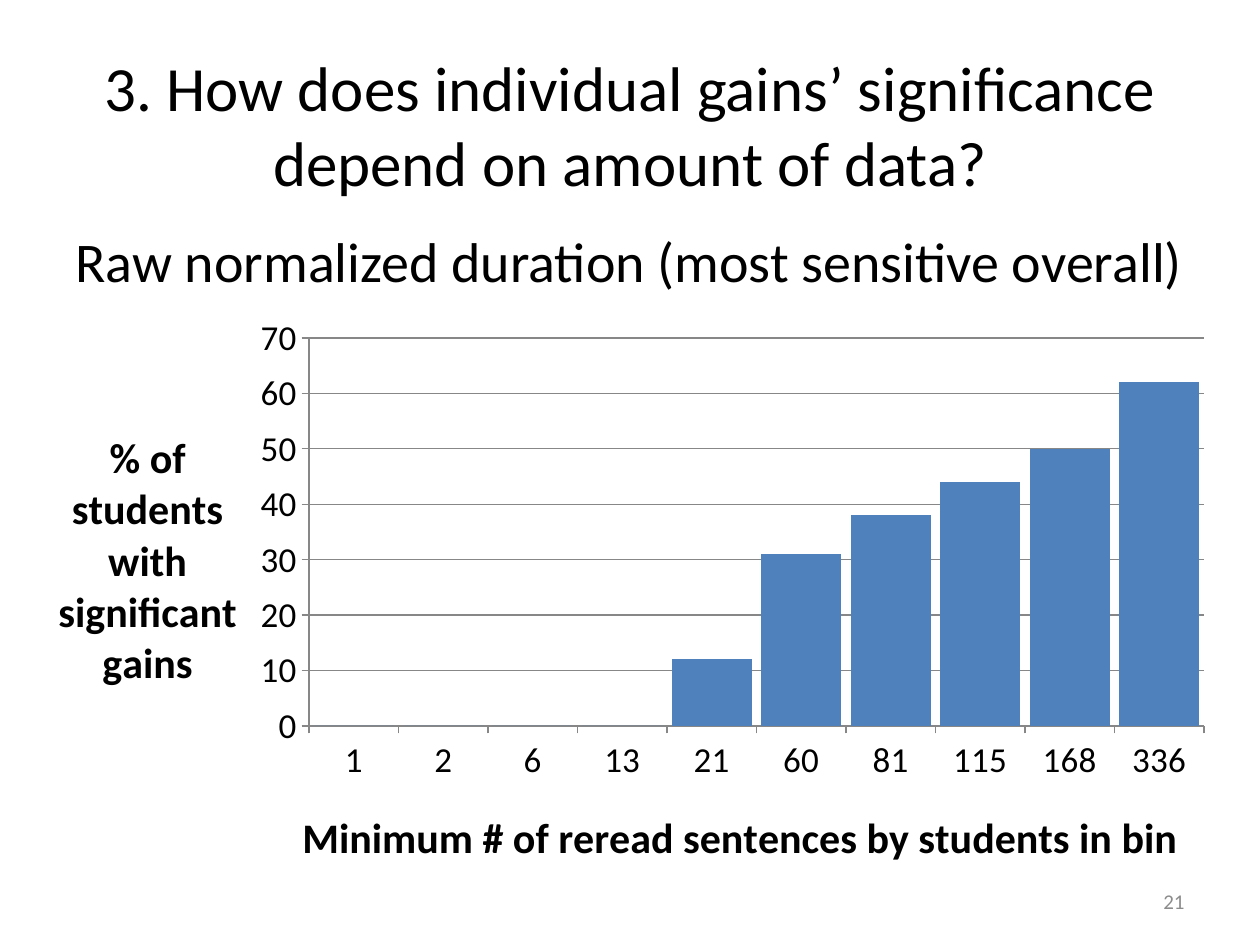
from dataclasses import dataclass
from lxml import etree
from pptx import Presentation
from pptx.chart.data import CategoryChartData
from pptx.dml.color import RGBColor
from pptx.enum.chart import XL_CHART_TYPE, XL_TICK_MARK
from pptx.enum.text import MSO_ANCHOR, PP_ALIGN
from pptx.oxml.ns import qn
from pptx.util import Pt

COLUMN = XL_CHART_TYPE.COLUMN_CLUSTERED
OUTSIDE = XL_TICK_MARK.OUTSIDE
TOP, MIDDLE = MSO_ANCHOR.TOP, MSO_ANCHOR.MIDDLE
LEFT, CENTER, RIGHT = PP_ALIGN.LEFT, PP_ALIGN.CENTER, PP_ALIGN.RIGHT


@dataclass(frozen=True)
class Theme:
    font: str = "Calibri"
    ink: str = "000000"
    muted: str = "8C8C8C"
    grid: str = "878787"
    bar: str = "4F81BD"
    title: int = 36
    body: int = 32
    label: int = 24
    tick: int = 20
    small: int = 12


THEME = Theme()

TEXTS = [
    ("3. How does individual gains’ significance depend on amount of data?",
     (36, 30, 648, 81.5), THEME.title, THEME.ink, CENTER, MIDDLE),
    ("Raw normalized duration (most sensitive overall)",
     (36, 126, 684, 48), THEME.body, THEME.ink, LEFT, TOP),
    ("21", (516, 500.5, 168, 28.75), THEME.small, THEME.muted, RIGHT, MIDDLE),
]

BINS = {"1": 0, "2": 0, "6": 0, "13": 0, "21": 12,
        "60": 31, "81": 38, "115": 44, "168": 50, "336": 62}
FRAME = (12.24, 174.24, 689.76, 327.6)
PLOT = (176.57, 193.14, 511.43, 221.71)
X_TITLE = ("Minimum # of reread sentences by students in bin", (168.5, 458))
Y_TITLE = ("% of students with significant gains", (29, 241))


def style(font, size, color, bold=False):
    font.name = THEME.font
    font.size = Pt(size)
    font.bold = bold
    font.color.rgb = RGBColor.from_string(color)


def add_text(slide, text, box, size, color, align, anchor):
    frame = slide.shapes.add_textbox(*map(Pt, box)).text_frame
    frame.word_wrap = True
    frame.vertical_anchor = anchor
    para = frame.paragraphs[0]
    para.alignment = align
    run = para.add_run()
    run.text = text
    style(run.font, size, color)


def place(node, box, inner=False):
    for old in node.findall(qn("c:layout")):
        node.remove(old)
    layout = etree.Element(qn("c:layout"))
    manual = etree.SubElement(layout, qn("c:manualLayout"))
    parts = [("layoutTarget", "inner")] if inner else []
    parts += [("xMode", "edge"), ("yMode", "edge")]
    parts += [("x", (box[0] - FRAME[0]) / FRAME[2]),
              ("y", (box[1] - FRAME[1]) / FRAME[3])]
    if inner:
        parts += [("w", box[2] / FRAME[2]), ("h", box[3] / FRAME[3])]
    for name, value in parts:
        etree.SubElement(manual, qn("c:" + name)).set("val", str(value))
    text = node.find(qn("c:tx"))
    node.insert(0 if text is None else node.index(text) + 1, layout)


def set_axis(axis, title):
    text, spot = title
    axis.major_tick_mark = OUTSIDE
    axis.format.line.color.rgb = RGBColor.from_string(THEME.grid)
    style(axis.tick_labels.font, THEME.tick, THEME.ink)
    frame = axis.axis_title.text_frame
    run = frame.paragraphs[0].add_run()
    run.text = text
    style(run.font, THEME.label, THEME.ink, True)
    body = frame._txBody.find(qn("a:bodyPr"))
    body.set("rot", "0")
    body.set("vert", "horz")
    place(axis.axis_title._element, spot)


def add_bars(slide):
    data = CategoryChartData()
    data.categories = list(BINS)
    data.add_series("Series 1", list(BINS.values()))
    chart = slide.shapes.add_chart(COLUMN, *map(Pt, FRAME), data).chart
    chart.has_legend = False
    chart.has_title = False
    style(chart.font, THEME.tick, THEME.ink)
    plot = chart.plots[0]
    plot.gap_width = 12
    plot.vary_by_categories = False
    fill = plot.series[0].format.fill
    fill.solid()
    fill.fore_color.rgb = RGBColor.from_string(THEME.bar)
    set_axis(chart.category_axis, X_TITLE)
    axis = chart.value_axis
    set_axis(axis, Y_TITLE)
    axis.minimum_scale, axis.maximum_scale, axis.major_unit = 0, 70, 10
    axis.has_major_gridlines = True
    line = axis.major_gridlines.format.line
    line.color.rgb = RGBColor.from_string(THEME.grid)
    place(chart._chartSpace.chart.plotArea, PLOT, True)


def main():
    deck = Presentation()
    deck.slide_width, deck.slide_height = Pt(720), Pt(540)
    slide = deck.slides.add_slide(deck.slide_layouts[6])
    for item in TEXTS:
        add_text(slide, *item)
    add_bars(slide)
    deck.save("out.pptx")


if __name__ == "__main__":
    main()
